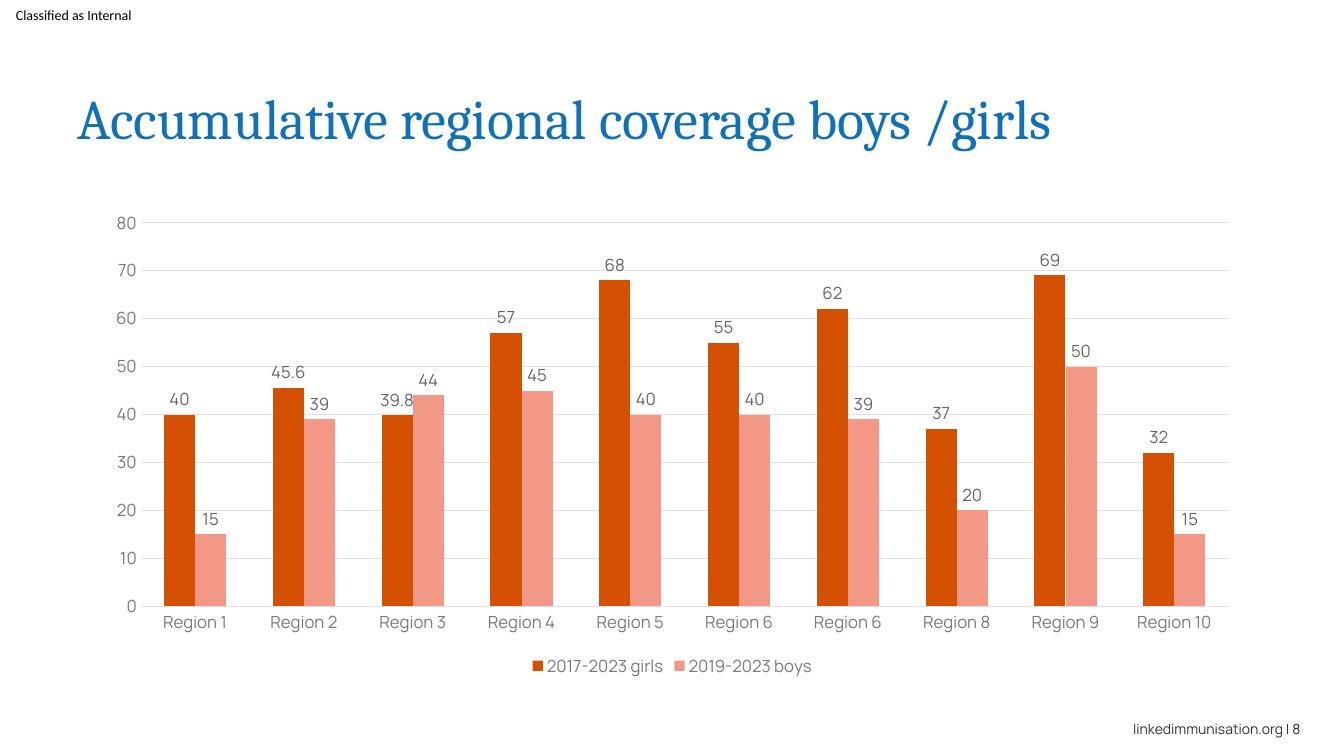
"""Build the slide on accumulative regional coverage of girls and boys."""
from pptx import Presentation
from pptx.chart.data import CategoryChartData
from pptx.dml.color import RGBColor
from pptx.enum.chart import XL_CHART_TYPE, XL_LABEL_POSITION, XL_LEGEND_POSITION, XL_TICK_MARK
from pptx.enum.text import MSO_ANCHOR, PP_ALIGN
from pptx.util import Cm, Pt

TITLE = "Accumulative regional coverage boys /girls"
CLASSIFICATION = "Classified as Internal"
FOOTER = "linkedimmunisation.org | 8"
REGIONS = [f"Region {number}" for number in (1, 2, 3, 4, 5, 6, 6, 8, 9, 10)]
SERIES = [
    ("2017-2023 girls", "D45103", (40, 45.6, 39.8, 57, 68, 55, 62, 37, 69, 32)),
    ("2019-2023 boys", "F39887", (15, 39, 44, 45, 40, 40, 39, 20, 50, 15)),
]
CHART_FONT = "Manrope"
AXIS_GREY = "777A7C"
LABEL_GREY = "636567"
GRID_GREY = "E0E0E1"
DARK_GREY = "313233"


def color(value):
    return RGBColor.from_string(value)


def set_font(font, name, size, font_color):
    font.name = name
    font.size = Pt(size)
    font.color.rgb = color(font_color)


def add_text(slide, text, box, *, font, size, font_color, align=PP_ALIGN.LEFT,
             anchor=MSO_ANCHOR.BOTTOM, margins=(0.25, 0.13)):
    shape = slide.shapes.add_textbox(*(Cm(length) for length in box))
    frame = shape.text_frame
    frame.word_wrap = True
    frame.vertical_anchor = anchor
    frame.margin_left = frame.margin_right = Cm(margins[0])
    frame.margin_top = frame.margin_bottom = Cm(margins[1])
    paragraph = frame.paragraphs[0]
    paragraph.text = text
    paragraph.alignment = align
    set_font(paragraph.runs[0].font, font, size, font_color)


def style_axis(axis):
    axis.major_tick_mark = axis.minor_tick_mark = XL_TICK_MARK.NONE
    axis.format.line.fill.background()
    set_font(axis.tick_labels.font, CHART_FONT, 12, AXIS_GREY)


def add_coverage_chart(slide, box):
    data = CategoryChartData()
    data.categories = REGIONS
    for name, _, values in SERIES:
        data.add_series(name, values)
    chart = slide.shapes.add_chart(
        XL_CHART_TYPE.COLUMN_CLUSTERED, *(Cm(length) for length in box), data).chart
    set_font(chart.font, CHART_FONT, 10, DARK_GREY)
    chart.has_title = False
    chart.has_legend = True
    chart.legend.position = XL_LEGEND_POSITION.BOTTOM
    chart.legend.include_in_layout = False
    set_font(chart.legend.font, CHART_FONT, 12, AXIS_GREY)

    style_axis(chart.category_axis)
    style_axis(chart.value_axis)
    chart.value_axis.minimum_scale = 0
    chart.value_axis.maximum_scale = 80
    chart.value_axis.major_unit = 10
    grid_line = chart.value_axis.major_gridlines.format.line
    grid_line.color.rgb = color(GRID_GREY)
    grid_line.width = Pt(0.75)

    plot = chart.plots[0]
    plot.gap_width = 150
    plot.overlap = 0
    plot.vary_by_categories = False
    for series, (_, fill, _) in zip(plot.series, SERIES):
        series.format.fill.solid()
        series.format.fill.fore_color.rgb = color(fill)
        series.invert_if_negative = False
        labels = series.data_labels
        labels.show_value = True
        labels.position = XL_LABEL_POSITION.OUTSIDE_END
        set_font(labels.font, CHART_FONT, 12, LABEL_GREY)


def main():
    presentation = Presentation()
    presentation.slide_width = Cm(33.87)
    presentation.slide_height = Cm(19.05)
    slide = presentation.slides.add_slide(presentation.slide_layouts[6])
    add_text(slide, FOOTER, (25.3, 17.68, 7.72, 1.02), font=CHART_FONT, size=10,
             font_color=DARK_GREY, align=PP_ALIGN.RIGHT)
    add_text(slide, CLASSIFICATION, (0, 0, 3.76, 0.74), font="Calibri", size=10,
             font_color="000000", anchor=MSO_ANCHOR.MIDDLE, margins=(0.4, 0))
    add_text(slide, TITLE, (1.7, 0.76, 30.48, 3.18), font="Cambria", size=40,
             font_color="1070B8")
    add_coverage_chart(slide, (2.34, 5.08, 29.21, 12.09))
    presentation.save("out.pptx")


if __name__ == "__main__":
    main()
